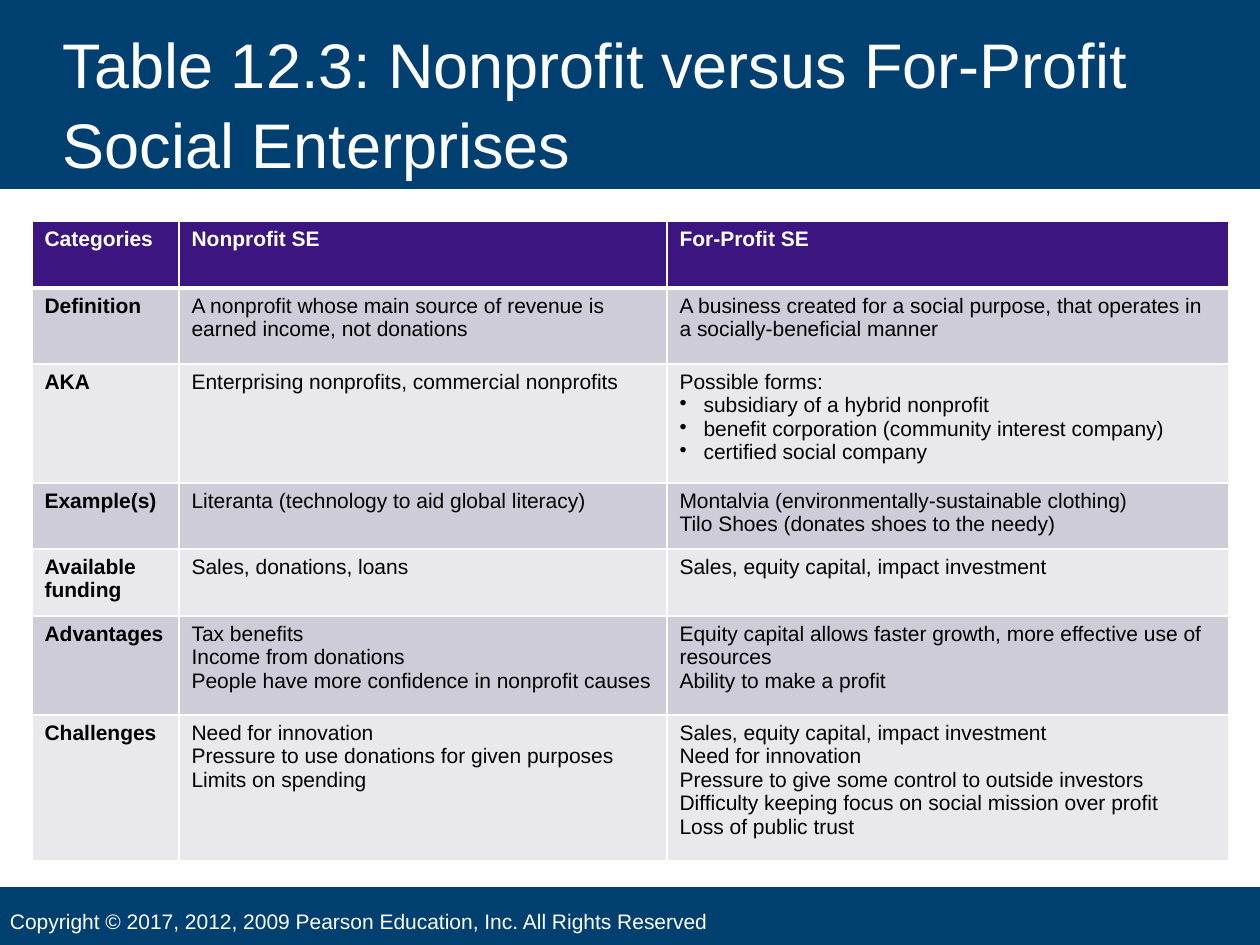
"""Builds the slide comparing nonprofit and for-profit social enterprises."""
import pptx
import pptx.dml.color
import pptx.enum.shapes
import pptx.enum.text
import pptx.oxml.ns
import pptx.oxml.xmlchemy
import pptx.util
import lxml.etree

PX = 914400 / 126
FONT = "Arial"
NAVY = pptx.dml.color.RGBColor(0x00, 0x40, 0x70)
PURPLE = pptx.dml.color.RGBColor(0x3C, 0x15, 0x81)
LAVENDER = pptx.dml.color.RGBColor(0xCE, 0xCC, 0xD8)
PALE = pptx.dml.color.RGBColor(0xE8, 0xE8, 0xED)
WHITE = pptx.dml.color.RGBColor(0xFF, 0xFF, 0xFF)
BLACK = pptx.dml.color.RGBColor(0x00, 0x00, 0x00)

TITLE = "Table 12.3: Nonprofit versus For-Profit Social Enterprises"
COPYRIGHT = "Copyright © 2017, 2012, 2009 Pearson Education, Inc. All Rights Reserved"
BULLET = "•"
COLUMN_WIDTHS = [147, 488, 562]
ROW_HEIGHTS = [67, 76, 119, 66, 67, 99, 146]
COMPARISON = [
    (["Categories"], ["Nonprofit SE"], ["For-Profit SE"]),
    (["Definition"],
     ["A nonprofit whose main source of revenue is earned income, not donations"],
     ["A business created for a social purpose, that operates in a socially-beneficial manner"]),
    (["AKA"],
     ["Enterprising nonprofits, commercial nonprofits"],
     ["Possible forms:",
      "•subsidiary of a hybrid nonprofit",
      "•benefit corporation (community interest company)",
      "•certified social company"]),
    (["Example(s)"],
     ["Literanta (technology to aid global literacy)"],
     ["Montalvia (environmentally-sustainable clothing)",
      "Tilo Shoes (donates shoes to the needy)"]),
    (["Available funding"],
     ["Sales, donations, loans"],
     ["Sales, equity capital, impact investment"]),
    (["Advantages"],
     ["Tax benefits", "Income from donations",
      "People have more confidence in nonprofit causes"],
     ["Equity capital allows faster growth, more effective use of resources",
      "Ability to make a profit"]),
    (["Challenges"],
     ["Need for innovation", "Pressure to use donations for given purposes",
      "Limits on spending"],
     ["Sales, equity capital, impact investment", "Need for innovation",
      "Pressure to give some control to outside investors",
      "Difficulty keeping focus on social mission over profit",
      "Loss of public trust"]),
]


def px(length):
    """Turn pixels into EMU."""
    return pptx.util.Emu(round(length * PX))


def add_run(paragraph, text, size, color, bold=False):
    """Add one styled run to a paragraph."""
    run = paragraph.add_run()
    run.text = text
    run.font.name = FONT
    run.font.size = pptx.util.Pt(size)
    run.font.bold = bold
    run.font.color.rgb = color


def add_band(slide, left, top, width, height):
    """Draw a plain navy band."""
    band = slide.shapes.add_shape(
        pptx.enum.shapes.MSO_SHAPE.RECTANGLE, px(left), px(top), px(width), px(height))
    band.shadow.inherit = False
    band.fill.solid()
    band.fill.fore_color.rgb = NAVY
    band.line.fill.background()


def add_caption(slide, left, top, width, height, text, size, spacing=1.0):
    """Place bottom-anchored white text without insets."""
    frame = slide.shapes.add_textbox(px(left), px(top), px(width), px(height)).text_frame
    frame.word_wrap = True
    frame.vertical_anchor = pptx.enum.text.MSO_ANCHOR.BOTTOM
    frame.margin_left = frame.margin_top = frame.margin_right = frame.margin_bottom = 0
    frame.paragraphs[0].line_spacing = spacing
    add_run(frame.paragraphs[0], text, size, WHITE)


def add_header(slide, left, top, width, height):
    """Draw the top band with the slide title."""
    add_band(slide, left, top, width, height)
    add_caption(slide, left + 63, top + 30, width - 126, height - 38, TITLE, 36, 1.05)


def add_footer(slide, left, top, width, height):
    """Draw the bottom band with the copyright line."""
    add_band(slide, left, top, width, height)
    add_caption(slide, left + 10, top + 14, width - 76, 33, COPYRIGHT, 12)


def set_borders(cell, widths):
    """Give a cell white borders, with a width in points for each side."""
    properties = cell._tc.get_or_add_tcPr()
    for side, width in widths.items():
        border = lxml.etree.SubElement(
            properties, pptx.oxml.ns.qn(f"a:ln{side}"), w=str(pptx.util.Pt(width)))
        fill = lxml.etree.SubElement(border, pptx.oxml.ns.qn("a:solidFill"))
        lxml.etree.SubElement(fill, pptx.oxml.ns.qn("a:srgbClr"), val=str(WHITE))


def add_bullet(paragraph):
    """Give a paragraph a bullet with a hanging indent."""
    properties = paragraph._p.get_or_add_pPr()
    properties.set("marL", str(px(24)))
    properties.set("indent", str(-px(24)))
    lxml.etree.SubElement(properties, pptx.oxml.ns.qn("a:buChar"), char=BULLET)


def fill_cell(cell, lines, fill, color, bold):
    """Write the lines of a cell, one paragraph each."""
    cell.fill.solid()
    cell.fill.fore_color.rgb = fill
    for index, line in enumerate(lines):
        frame = cell.text_frame
        paragraph = frame.add_paragraph() if index else frame.paragraphs[0]
        if line.startswith(BULLET):
            add_bullet(paragraph)
        add_run(paragraph, line.removeprefix(BULLET), 12, color, bold)


def add_comparison(slide, left, top, width, height):
    """Build the comparison table."""
    table = slide.shapes.add_table(
        len(ROW_HEIGHTS), len(COLUMN_WIDTHS), px(left), px(top), px(width), px(height)).table
    for column, column_width in zip(table.columns, COLUMN_WIDTHS):
        column.width = px(column_width)
    for row, row_height in zip(table.rows, ROW_HEIGHTS):
        row.height = px(row_height)
    for r, entries in enumerate(COMPARISON):
        heading = r == 0
        fill = PURPLE if heading else (LAVENDER if r % 2 else PALE)
        for c, lines in enumerate(entries):
            cell = table.cell(r, c)
            set_borders(cell, {"L": 1, "R": 1, "T": 3 if r == 1 else 1, "B": 3 if heading else 1})
            fill_cell(cell, lines, fill, WHITE if heading else BLACK, heading or c == 0)


def main():
    """Build and save the slide."""
    presentation = pptx.Presentation()
    presentation.slide_width = px(1260)
    presentation.slide_height = px(945)
    slide = presentation.slides.add_slide(presentation.slide_layouts[6])
    add_header(slide, 0, 0, 1260, 189)
    add_comparison(slide, 32, 221, sum(COLUMN_WIDTHS), sum(ROW_HEIGHTS))
    add_footer(slide, 0, 887, 1260, 58)
    presentation.save("out.pptx")


if __name__ == "__main__":
    main()
